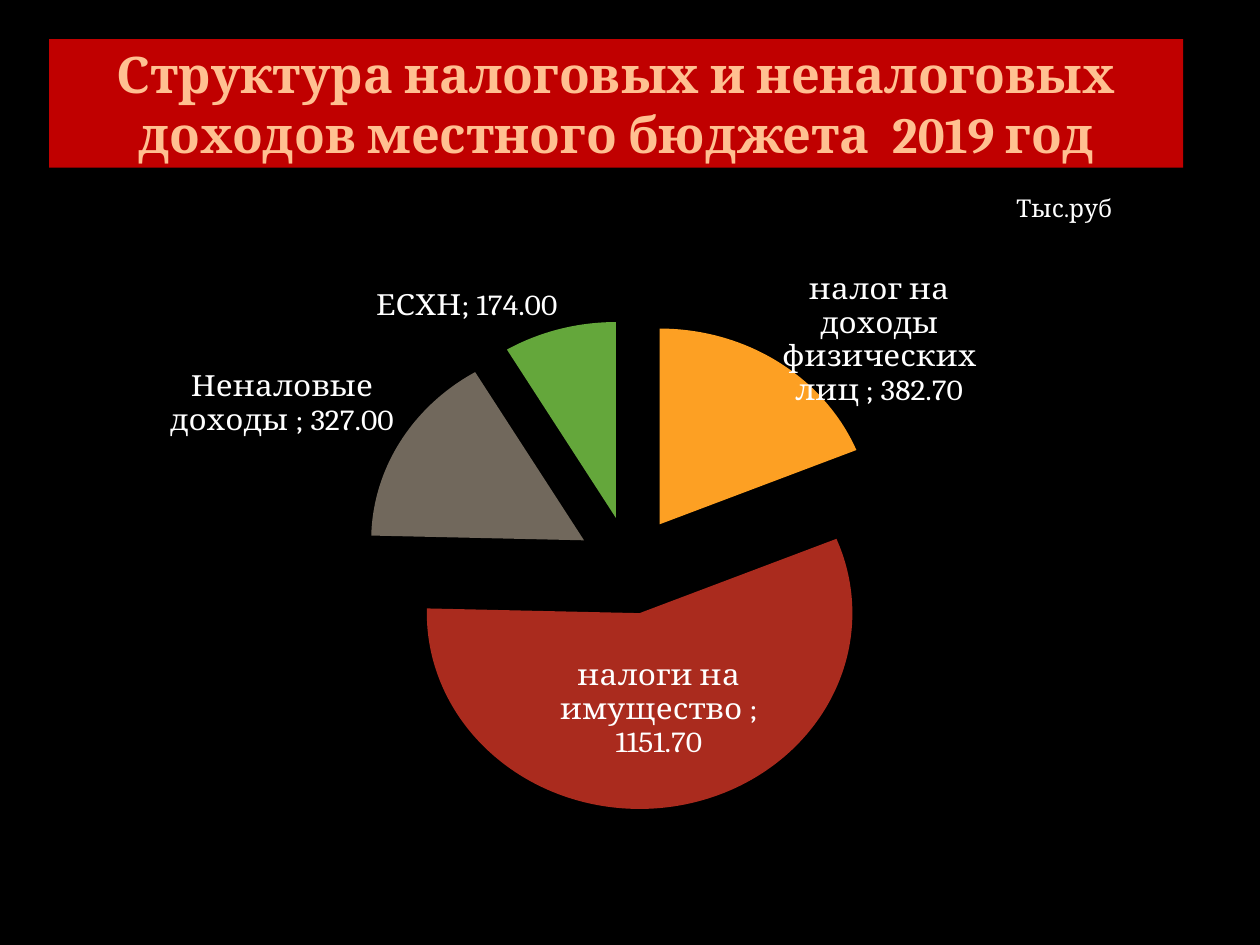
from dataclasses import dataclass

from lxml.etree import SubElement
from pptx import Presentation
from pptx.chart.data import CategoryChartData
from pptx.dml.color import RGBColor
from pptx.enum.chart import XL_CHART_TYPE, XL_LABEL_POSITION
from pptx.enum.text import MSO_ANCHOR, PP_ALIGN
from pptx.oxml import parse_xml
from pptx.oxml.ns import nsdecls, qn
from pptx.util import Cm, Pt


@dataclass(frozen=True)
class Theme:
    font: str = "Cambria"
    background: str = "000000"
    banner: str = "C00000"
    heading: str = "FFC091"
    text: str = "FFFFFF"
    slices: tuple = ("FDA023", "AA2B1E", "71685C", "64A73B")
    heading_size: float = 28.8
    label_size: float = 18
    unit_size: float = 14


THEME = Theme()
NUMBER_FORMAT = "0.00"
REVENUES = {
    "налог на доходы физических лиц ": 382.7,
    "налоги на имущество ": 1151.7,
    "Неналовые доходы ": 327,
    "ЕСХН": 174,
}
INCOME_TAX, PROPERTY_TAX = 0, 1


def paint(fill, color):
    fill.solid()
    fill.fore_color.rgb = RGBColor.from_string(color)


def style_font(font, size, color, bold=False):
    font.name = THEME.font
    font.size = Pt(size)
    font.bold = bold
    font.color.rgb = RGBColor.from_string(color)


def add_run(paragraph, text, size, color, bold=False):
    run = paragraph.add_run()
    run.text = text
    style_font(run.font, size, color, bold)


def fill_title(title, text):
    title.left, title.top, title.width, title.height = Cm(0.99), Cm(0.79), Cm(22.86), Cm(2.59)
    paint(title.fill, THEME.banner)
    frame = title.text_frame
    frame.word_wrap = True
    frame.vertical_anchor = MSO_ANCHOR.MIDDLE
    paragraph = frame.paragraphs[0]
    paragraph.alignment = PP_ALIGN.CENTER
    add_run(paragraph, text, THEME.heading_size, THEME.heading, bold=True)


def add_unit_note(slide, text):
    note = slide.shapes.add_textbox(Cm(20.24), Cm(3.76), Cm(3.38), Cm(0.86))
    note.text_frame.word_wrap = True
    add_run(note.text_frame.paragraphs[0], text, THEME.unit_size, THEME.text)


def manual_layout(x, y, w=None, h=None):
    """Plot area when w and h are given, otherwise the shift of a label."""
    layout = parse_xml(f"<c:layout {nsdecls('c')}><c:manualLayout/></c:layout>")
    settings = {"x": x, "y": y}
    if w is not None:
        settings = {"layoutTarget": "inner", "xMode": "edge", "yMode": "edge",
                    **settings, "w": w, "h": h}
    for name, value in settings.items():
        SubElement(layout[0], qn(f"c:{name}")).set("val", str(value))
    return layout


def place_label(series, index, position, shift=None):
    """Give one slice its own label position, with the look of the others."""
    label = series.points[index].data_label
    style_font(label.font, THEME.label_size, THEME.text)
    label.position = position
    element = next(item for item in series.data_labels._element.findall(qn("c:dLbl"))
                   if item.find(qn("c:idx")).get("val") == str(index))
    element.find(qn("c:showCatName")).set("val", "1")
    anchor = element.find(qn("c:idx"))
    anchor.addnext(parse_xml(
        f'<c:numFmt {nsdecls("c")} formatCode="{NUMBER_FORMAT}" sourceLinked="0"/>'))
    if shift:
        anchor.addnext(manual_layout(*shift))


def add_revenue_pie(slide):
    data = CategoryChartData(number_format=NUMBER_FORMAT)
    data.categories = list(REVENUES)
    data.add_series("Series 1", list(REVENUES.values()))
    chart = slide.shapes.add_chart(
        XL_CHART_TYPE.PIE, Cm(1.27), Cm(4.45), Cm(22.86), Cm(13.08), data).chart
    chart.has_legend = False
    chart.has_title = False
    style_font(chart.font, THEME.label_size, THEME.text)

    plot_area = chart._chartSpace.chart.plotArea
    for old_layout in plot_area.findall(qn("c:layout")):
        plot_area.remove(old_layout)
    plot_area.insert(0, manual_layout(0.08, 0.08, 0.84, 0.82))

    plot = chart.plots[0]
    plot.vary_by_categories = True
    series = plot.series[0]
    series._element.find(qn("c:tx")).addnext(
        parse_xml(f'<c:explosion {nsdecls("c")} val="25"/>'))
    for index, color in enumerate(THEME.slices):
        paint(series.points[index].format.fill, color)

    labels = series.data_labels
    labels.show_value = True
    labels.show_category_name = True
    labels.show_percentage = False
    labels.number_format = NUMBER_FORMAT
    labels.number_format_is_linked = False
    labels.position = XL_LABEL_POSITION.OUTSIDE_END
    style_font(labels.font, THEME.label_size, THEME.text)
    place_label(series, INCOME_TAX, XL_LABEL_POSITION.OUTSIDE_END, shift=(0, 0.06))
    place_label(series, PROPERTY_TAX, XL_LABEL_POSITION.CENTER)
    for holder in (*labels._element.findall(qn("c:dLbl")), labels._element):
        separator = parse_xml(f"<c:separator {nsdecls('c')}>; </c:separator>")
        last_flag = holder.find(qn("c:showBubbleSize"))
        if last_flag is None:
            last_flag = holder.find(qn("c:showPercent"))
        last_flag.addnext(separator)


def main():
    presentation = Presentation()
    presentation.slide_width, presentation.slide_height = Cm(25.4), Cm(19.05)
    slide = presentation.slides.add_slide(presentation.slide_layouts.get_by_name("Title Only"))
    paint(slide.background.fill, THEME.background)
    fill_title(slide.shapes.title,
               "Структура налоговых и неналоговых доходов местного бюджета  2019 год")
    add_revenue_pie(slide)
    add_unit_note(slide, "Тыс.руб")
    presentation.save("out.pptx")


if __name__ == "__main__":
    main()
